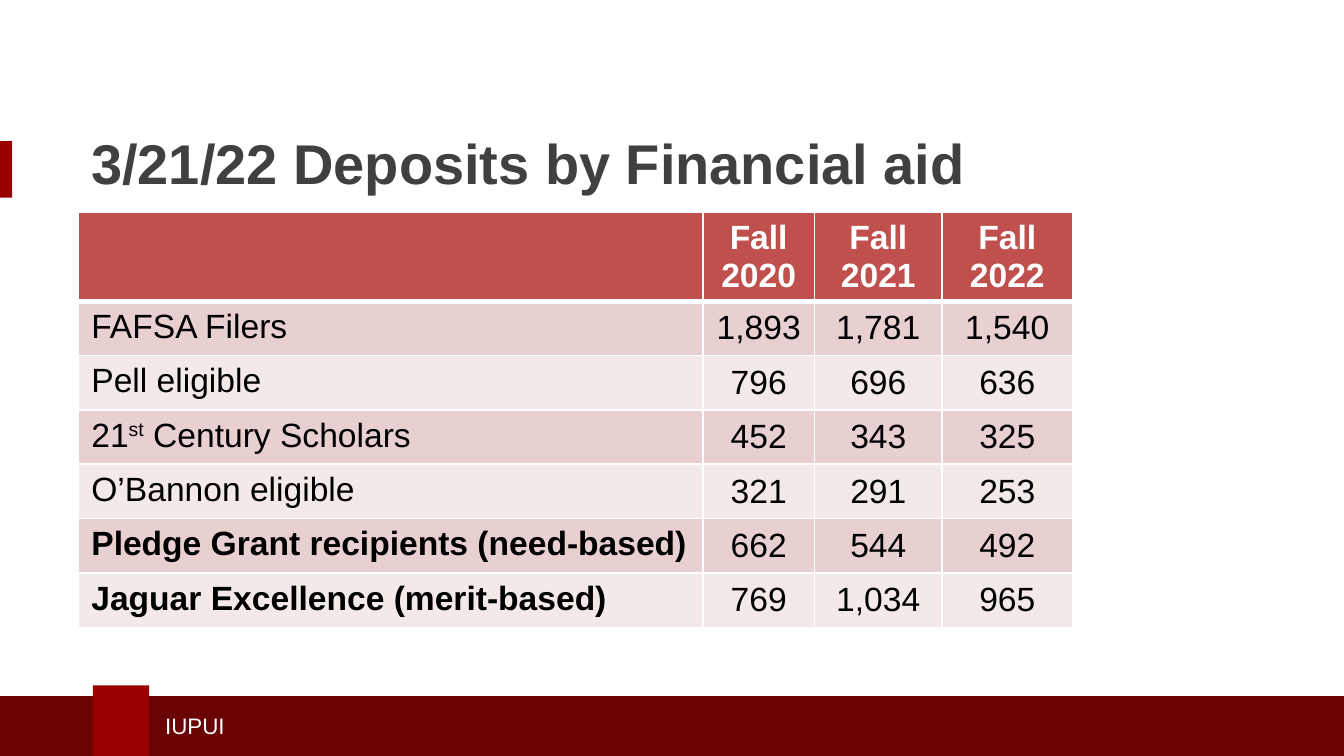
from dataclasses import dataclass

from lxml.etree import SubElement
from pptx import Presentation
from pptx.dml.color import RGBColor
from pptx.enum.shapes import MSO_SHAPE as Shape
from pptx.enum.text import MSO_ANCHOR as Anchor, PP_ALIGN as Align
from pptx.oxml.ns import qn
from pptx.util import Inches, Pt

COLORS = {
    "crimson": "990000",
    "dark_crimson": "690304",
    "title": "404041",
    "header": "C0504D",
    "odd_row": "E8D0D0",
    "even_row": "F4E9E9",
    "white": "FFFFFF",
    "black": "000000",
}
FONT = "Arial"
SLIDE_WIDTH = 10
SLIDE_HEIGHT = SLIDE_WIDTH * 9 / 16


@dataclass
class Block:
    left: float
    top: float
    width: float
    height: float
    color: str


@dataclass
class Label:
    left: float
    top: float
    width: float
    height: float
    text: str
    size: float
    color: str
    bold: bool = False


@dataclass
class AidRow:
    name: str
    deposits: tuple[str, str, str]
    bold: bool = False
    superscript: str = ""


BLOCKS = [
    Block(0, 1.05, 0.09, 0.42, "crimson"),
    Block(0, 5.18, SLIDE_WIDTH, SLIDE_HEIGHT - 5.18, "dark_crimson"),
    Block(0.69, 5.1, 0.42, SLIDE_HEIGHT - 5.1, "crimson"),
]
LABELS = [
    Label(1.13, 5.25, 3.95, 0.3, "IUPUI", 12, "white"),
    Label(0.58, 0.83, 8.75, 0.76, "3/21/22 Deposits by Financial aid", 30, "title", True),
]
TERMS = ("Fall 2020", "Fall 2021", "Fall 2022")
AID_ROWS = [
    AidRow("FAFSA Filers", ("1,893", "1,781", "1,540")),
    AidRow("Pell eligible", ("796", "696", "636")),
    AidRow("21st Century Scholars", ("452", "343", "325"), superscript="st"),
    AidRow("O’Bannon eligible", ("321", "291", "253")),
    AidRow("Pledge Grant recipients (need-based)", ("662", "544", "492"), bold=True),
    AidRow("Jaguar Excellence (merit-based)", ("769", "1,034", "965"), bold=True),
]
COLUMN_WIDTHS = (4.65, 0.83, 0.95, 0.97)
TABLE_HEIGHT = 3.13
ROW_HEIGHT = 2.43 / len(AID_ROWS)


def rgb(name: str) -> RGBColor:
    return RGBColor.from_string(COLORS[name])


def format_runs(para, size: float, color: str, bold: bool) -> None:
    for span in para.runs:
        span.font.name = FONT
        span.font.size = Pt(size)
        span.font.bold = bold
        span.font.color.rgb = rgb(color)


def draw_block(slide, block: Block) -> None:
    shape = slide.shapes.add_shape(
        Shape.RECTANGLE, Inches(block.left), Inches(block.top),
        Inches(block.width), Inches(block.height))
    shape.shadow.inherit = False
    shape.fill.solid()
    shape.fill.fore_color.rgb = rgb(block.color)
    shape.line.fill.background()


def draw_label(slide, label: Label) -> None:
    box = slide.shapes.add_textbox(
        Inches(label.left), Inches(label.top), Inches(label.width), Inches(label.height))
    frame = box.text_frame
    frame.word_wrap = True
    frame.vertical_anchor = Anchor.MIDDLE
    frame.text = label.text
    format_runs(frame.paragraphs[0], label.size, label.color, label.bold)


def set_borders(cell, bottom: float = 1, top: float = 1) -> None:
    """Add white cell borders, which must precede the fill in the XML."""
    properties = cell._tc.get_or_add_tcPr()
    for tag, width in (("a:lnL", 1), ("a:lnR", 1), ("a:lnT", top), ("a:lnB", bottom)):
        line = SubElement(properties, qn(tag), w=str(Pt(width)))
        fill = SubElement(line, qn("a:solidFill"))
        SubElement(fill, qn("a:srgbClr"), val=COLORS["white"])


def fill_cell(cell, text: str, fill: str, color: str, bold: bool, anchor, align) -> None:
    cell.fill.solid()
    cell.fill.fore_color.rgb = rgb(fill)
    cell.vertical_anchor = anchor
    para = cell.text_frame.paragraphs[0]
    para.text = text
    para.alignment = align
    para.font.size = Pt(18)
    format_runs(para, 18, color, bold)


def raise_superscript(para, mark: str) -> None:
    """Split the paragraph's text around the mark and raise the mark."""
    before, after = para.text.split(mark, 1)
    para.text = before
    for text in (mark, after):
        para.add_run().text = text
    format_runs(para, 18, "black", False)
    para.runs[1].font._element.set("baseline", "30000")


def draw_aid_table(slide) -> None:
    table_frame = slide.shapes.add_table(
        len(AID_ROWS) + 1, len(COLUMN_WIDTHS), Inches(0.58), Inches(1.58),
        Inches(sum(COLUMN_WIDTHS)), Inches(TABLE_HEIGHT))
    table = table_frame.table
    for column, width in zip(table.columns, COLUMN_WIDTHS):
        column.width = Inches(width)
    for row in table.rows:
        row.height = Inches(ROW_HEIGHT)
    table_frame.height = Inches(TABLE_HEIGHT)

    for index, term in enumerate(("", *TERMS)):
        cell = table.cell(0, index)
        cell.margin_top = Inches(0.01)
        set_borders(cell, bottom=3)
        fill_cell(cell, term, "header", "white", True, Anchor.BOTTOM, Align.CENTER)

    for number, aid in enumerate(AID_ROWS, start=1):
        fill = "odd_row" if number % 2 else "even_row"
        for index, text in enumerate((aid.name, *aid.deposits)):
            cell = table.cell(number, index)
            is_name = index == 0
            set_borders(cell, top=3 if number == 1 else 1)
            fill_cell(cell, text, fill, "black", aid.bold and is_name,
                      Anchor.TOP if is_name else Anchor.MIDDLE,
                      Align.LEFT if is_name else Align.CENTER)
        if aid.superscript:
            raise_superscript(table.cell(number, 0).text_frame.paragraphs[0], aid.superscript)


def main() -> None:
    deck = Presentation()
    deck.slide_width = Inches(SLIDE_WIDTH)
    deck.slide_height = Inches(SLIDE_HEIGHT)
    slide = deck.slides.add_slide(deck.slide_layouts[6])
    for block in BLOCKS:
        draw_block(slide, block)
    for label in LABELS:
        draw_label(slide, label)
    draw_aid_table(slide)
    deck.save("out.pptx")


if __name__ == "__main__":
    main()
